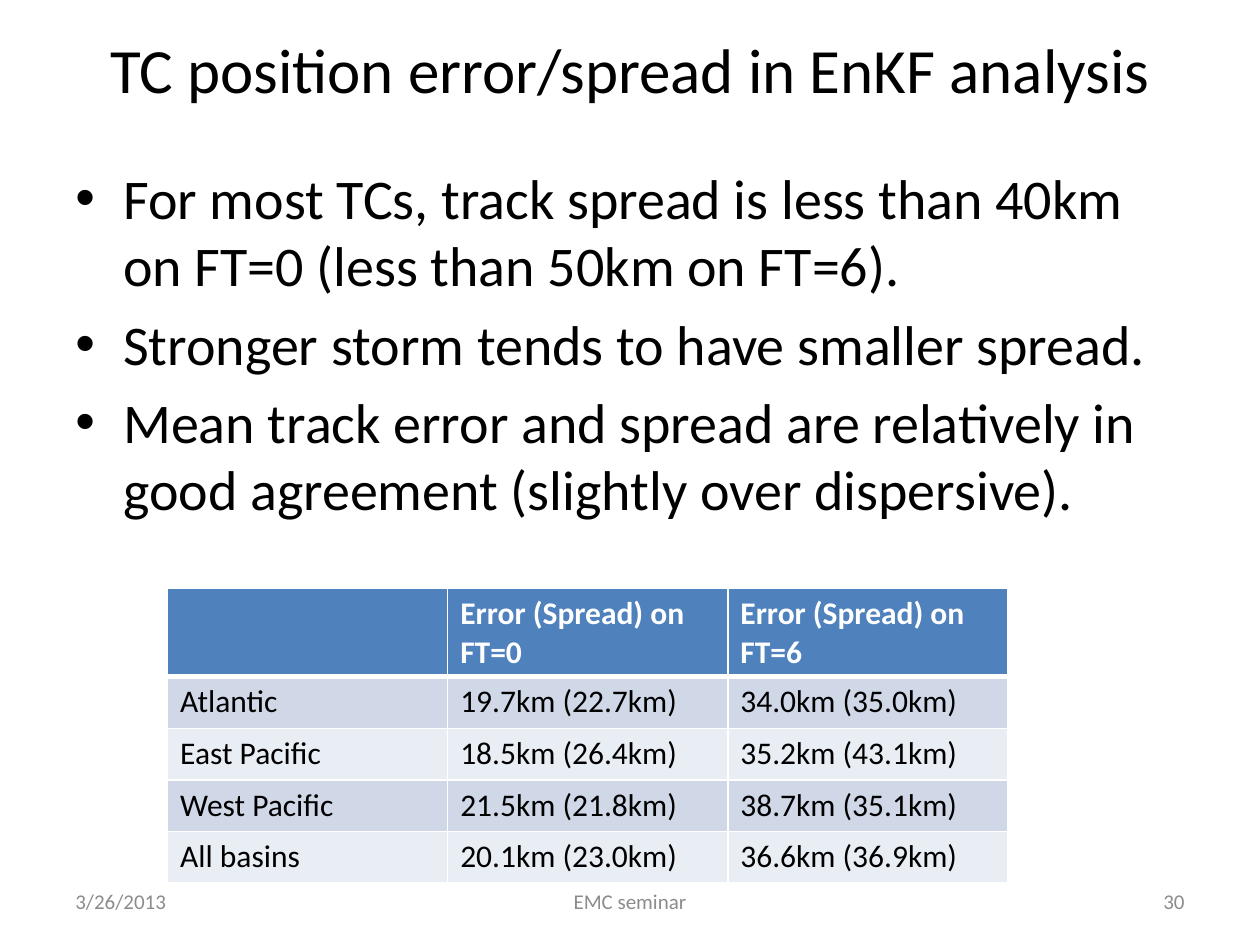
"""Build the slide on tropical cyclone position error and spread."""
from lxml import etree
from pptx import Presentation
from pptx.dml.color import RGBColor
from pptx.enum.text import MSO_ANCHOR, PP_ALIGN
from pptx.oxml.ns import qn
from pptx.util import Inches, Pt

LEFT, CENTER, RIGHT = PP_ALIGN.LEFT, PP_ALIGN.CENTER, PP_ALIGN.RIGHT
TOP, MIDDLE = MSO_ANCHOR.TOP, MSO_ANCHOR.MIDDLE

FONT = "Calibri"
BLACK, WHITE, GREY = "000000", "FFFFFF", "8C8C8C"
HEADER_FILL, BAND_FILLS = "4F81BD", ("D0D8E8", "E9EDF4")

WIDTH, HEIGHT, MARGIN = 10, 7.5, 0.5
CONTENT_WIDTH = WIDTH - 2 * MARGIN
TABLE_LEFT, TABLE_TOP, TABLE_WIDTH, ROW_HEIGHT = 1.33, 4.67, 6.67, 0.41
FOOTER_TOP, FOOTER_HEIGHT = 6.95, 0.4
BULLET_INDENT = 0.38

TITLE = "TC position error/spread in EnKF analysis"
BULLETS = [
    "For most TCs, track spread is less than 40km on FT=0 (less than 50km on FT=6).",
    "Stronger storm tends to have smaller spread.",
    "Mean track error and spread are relatively in good agreement (slightly over dispersive).",
]
ROWS = [
    ("", "Error (Spread) on FT=0", "Error (Spread) on FT=6"),
    ("Atlantic", "19.7km (22.7km)", "34.0km (35.0km)"),
    ("East Pacific", "18.5km (26.4km)", "35.2km (43.1km)"),
    ("West Pacific", "21.5km (21.8km)", "38.7km (35.1km)"),
    ("All basins", "20.1km (23.0km)", "36.6km (36.9km)"),
]
FOOTERS = [
    ("3/26/2013", 2.33, LEFT),
    ("EMC seminar", 3.17, CENTER),
    ("30", 2.33, RIGHT),
]


def color(hex_text):
    return RGBColor.from_string(hex_text)


def format_paragraph(paragraph, size, hex_text, align=LEFT, bold=False):
    paragraph.alignment = align
    for run in paragraph.runs:
        run.font.name = FONT
        run.font.size = Pt(size)
        run.font.bold = bold
        run.font.color.rgb = color(hex_text)


def add_text(slide, box, text, size, hex_text, align=LEFT, anchor=MIDDLE):
    shape = slide.shapes.add_textbox(*(Inches(length) for length in box))
    frame = shape.text_frame
    frame.word_wrap = True
    frame.vertical_anchor = anchor
    frame.text = text
    for paragraph in frame.paragraphs:
        format_paragraph(paragraph, size, hex_text, align)
    return frame


def add_bullet(paragraph):
    paragraph.space_before = Pt(6.4)
    properties = paragraph._p.get_or_add_pPr()
    properties.set("marL", str(Inches(BULLET_INDENT)))
    properties.set("indent", str(-Inches(BULLET_INDENT)))
    etree.SubElement(properties, qn("a:buFont"), typeface="Arial")
    etree.SubElement(properties, qn("a:buChar"), char="•")


def add_borders(cell, widths):
    properties = cell._tc.get_or_add_tcPr()
    for side, width in widths.items():
        line = etree.SubElement(properties, qn(f"a:ln{side}"), w=str(Pt(width)))
        fill = etree.SubElement(line, qn("a:solidFill"))
        etree.SubElement(fill, qn("a:srgbClr"), val=WHITE)


def add_error_table(slide):
    table = slide.shapes.add_table(
        len(ROWS), len(ROWS[0]), Inches(TABLE_LEFT), Inches(TABLE_TOP),
        Inches(TABLE_WIDTH), Inches(ROW_HEIGHT * len(ROWS))).table
    for row_index, row in enumerate(ROWS):
        header = row_index == 0
        fill = HEADER_FILL if header else BAND_FILLS[(row_index - 1) % 2]
        for column_index, text in enumerate(row):
            cell = table.cell(row_index, column_index)
            cell.text = text
            format_paragraph(cell.text_frame.paragraphs[0], 18,
                             WHITE if header else BLACK, bold=header)
            add_borders(cell, {"L": 1, "R": 1, "T": 3 if row_index == 1 else 1,
                               "B": 3 if header else 1})
            cell.fill.solid()
            cell.fill.fore_color.rgb = color(fill)


def main():
    presentation = Presentation()
    presentation.slide_width, presentation.slide_height = Inches(WIDTH), Inches(HEIGHT)
    slide = presentation.slides.add_slide(presentation.slide_layouts[6])

    add_text(slide, (MARGIN, 0.08, CONTENT_WIDTH, 0.92), TITLE, 36, BLACK, CENTER)
    body = add_text(slide, (MARGIN, 1.25, CONTENT_WIDTH, 3.42),
                    "\n".join(BULLETS), 32, BLACK, anchor=TOP)
    for paragraph in body.paragraphs:
        add_bullet(paragraph)
    add_error_table(slide)

    for text, width, align in FOOTERS:
        share = {LEFT: 0, CENTER: 0.5, RIGHT: 1}[align]
        left = MARGIN + share * (CONTENT_WIDTH - width)
        add_text(slide, (left, FOOTER_TOP, width, FOOTER_HEIGHT), text, 12, GREY, align)

    presentation.save("out.pptx")


if __name__ == "__main__":
    main()
